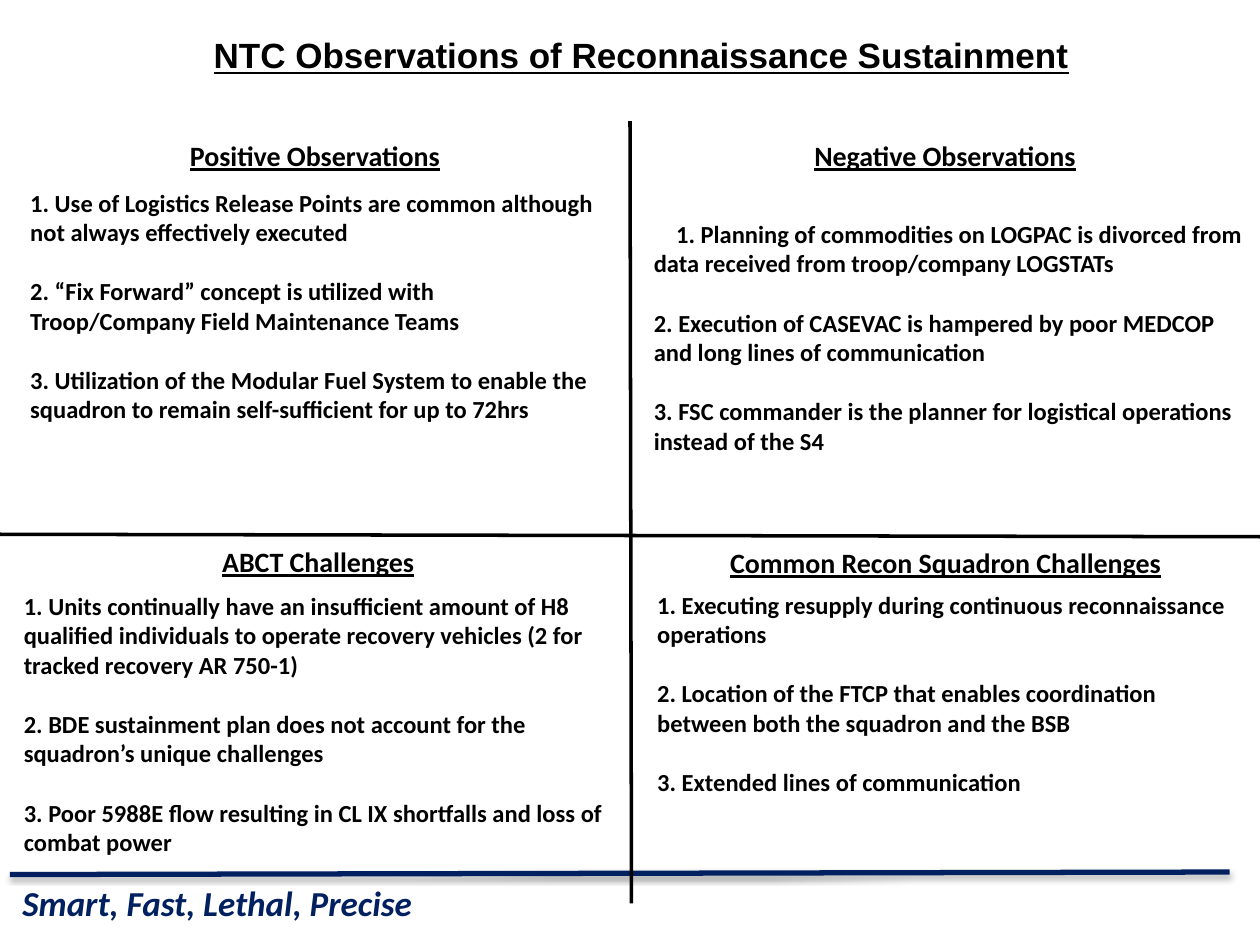
from dataclasses import dataclass

import lxml.etree
import pptx
import pptx.dml.color
import pptx.enum.shapes
import pptx.enum.text
import pptx.oxml.ns
import pptx.util

Cm = pptx.util.Cm
Pt = pptx.util.Pt
Color = pptx.dml.color.RGBColor
Align = pptx.enum.text.PP_ALIGN
Anchor = pptx.enum.text.MSO_ANCHOR


@dataclass(frozen=True)
class Theme:
    ink: Color = Color(0, 0, 0)
    navy: Color = Color(0x00, 0x20, 0x60)
    title_font: str = "Arial"
    text_font: str = "Calibri"
    title_size: int = 20
    heading_size: int = 16
    body_size: int = 14
    item_gap: int = 17
    divider_width: int = 2
    footer_width: int = 3


THEME = Theme()
HEADING_HEIGHT = 0.94

QUADRANTS = [
    ("Positive Observations", (0, 2.67, 12.7), (0.36, 3.66, 11.96, 5.05), 0, [
        "1. Use of Logistics Release Points are common although not always effectively executed",
        "2. “Fix Forward” concept is utilized with Troop/Company Field Maintenance Teams",
        "3. Utilization of the Modular Fuel System to enable the squadron to remain "
        "self-sufficient for up to 72hrs",
    ]),
    ("Negative Observations", (12.7, 2.67, 12.7), (12.93, 4.29, 12.47, 5.05), 0.45, [
        "1. Planning of commodities on LOGPAC is divorced from data received from "
        "troop/company LOGSTATs",
        "2. Execution of CASEVAC is hampered by poor MEDCOP and long lines of communication",
        "3. FSC commander is the planner for logistical operations instead of the S4",
    ]),
    ("ABCT Challenges", (0.08, 10.85, 12.67), (0.23, 11.79, 12.45, 5.64), 0, [
        "1. Units continually have an insufficient amount of H8 qualified individuals to "
        "operate recovery vehicles (2 for tracked recovery AR 750-1)",
        "2. BDE sustainment plan does not account for the squadron’s unique challenges",
        "3. Poor 5988E flow resulting in CL IX shortfalls and loss of combat power",
    ]),
    ("Common Recon Squadron Challenges", (12.73, 10.87, 12.67), (13, 11.76, 12.09, 5.05), 0, [
        "1. Executing resupply during continuous reconnaissance operations",
        "2. Location of the FTCP that enables coordination between both the squadron and the BSB",
        "3. Extended lines of communication",
    ]),
]


def add_box(page, left, top, width, height, anchor=Anchor.TOP):
    box = page.shapes.add_textbox(Cm(left), Cm(top), Cm(width), Cm(height))
    box.text_frame.word_wrap = True
    box.text_frame.vertical_anchor = anchor
    return box


def add_span(para, text, size, font=THEME.text_font, color=THEME.ink,
             underline=False, italic=False):
    span = para.add_run()
    span.text = text
    span.font.name = font
    span.font.size = Pt(size)
    span.font.bold = True
    span.font.italic = italic
    span.font.underline = underline
    span.font.color.rgb = color


def add_line(page, start, end, color, width):
    line = page.shapes.add_connector(
        pptx.enum.shapes.MSO_CONNECTOR.STRAIGHT,
        *(Cm(value) for value in start + end))
    line.line.color.rgb = color
    line.line.width = Pt(width)
    return lxml.etree.SubElement(
        line._element.spPr, pptx.oxml.ns.qn("a:effectLst"))


def add_shadow(effects):
    qn = pptx.oxml.ns.qn
    shadow = lxml.etree.SubElement(
        effects, qn("a:outerShdw"), blurRad=str(Pt(3.1)), dist=str(Pt(1.8)),
        dir="5400000", rotWithShape="0")
    color = lxml.etree.SubElement(shadow, qn("a:srgbClr"), val="000000")
    lxml.etree.SubElement(color, qn("a:alpha"), val="35000")


def add_footer(page):
    box = add_box(page, 0.2, 17.65, 22.86, 1.12)
    add_span(box.text_frame.paragraphs[0], "Smart, Fast, Lethal, Precise",
             THEME.title_size, color=THEME.navy, italic=True)
    add_shadow(add_line(page, (0.2, 17.63), (24.79, 17.58),
                        THEME.navy, THEME.footer_width))


def add_title(page, text):
    box = add_box(page, 1.5, 0.28, 22.86, 1.65, Anchor.MIDDLE)
    para = box.text_frame.paragraphs[0]
    para.alignment = Align.CENTER
    add_span(para, text, THEME.title_size, THEME.title_font, underline=True)


def add_heading(page, text, place):
    box = add_box(page, *place, HEADING_HEIGHT)
    para = box.text_frame.paragraphs[0]
    para.alignment = Align.CENTER
    add_span(para, text, THEME.heading_size, underline=True)


def add_items(page, items, place, first_indent):
    frame = add_box(page, *place).text_frame
    for index, item in enumerate(items):
        para = frame.add_paragraph() if index else frame.paragraphs[0]
        if index:
            para.space_before = Pt(THEME.item_gap)
        elif first_indent:
            para._p.get_or_add_pPr().set("indent", str(Cm(first_indent)))
        add_span(para, item, THEME.body_size)


def main():
    deck = pptx.Presentation()
    deck.slide_width, deck.slide_height = Cm(25.4), Cm(19.05)
    page = deck.slides.add_slide(deck.slide_layouts[6])
    add_footer(page)
    add_title(page, "NTC Observations of Reconnaissance Sustainment")
    add_line(page, (12.7, 2.44), (12.73, 18.21), THEME.ink, THEME.divider_width)
    add_line(page, (0, 10.77), (25.4, 10.82), THEME.ink, THEME.divider_width)
    for heading, heading_place, items_place, first_indent, items in QUADRANTS:
        add_heading(page, heading, heading_place)
        add_items(page, items, items_place, first_indent)
    deck.save("out.pptx")


if __name__ == "__main__":
    main()
